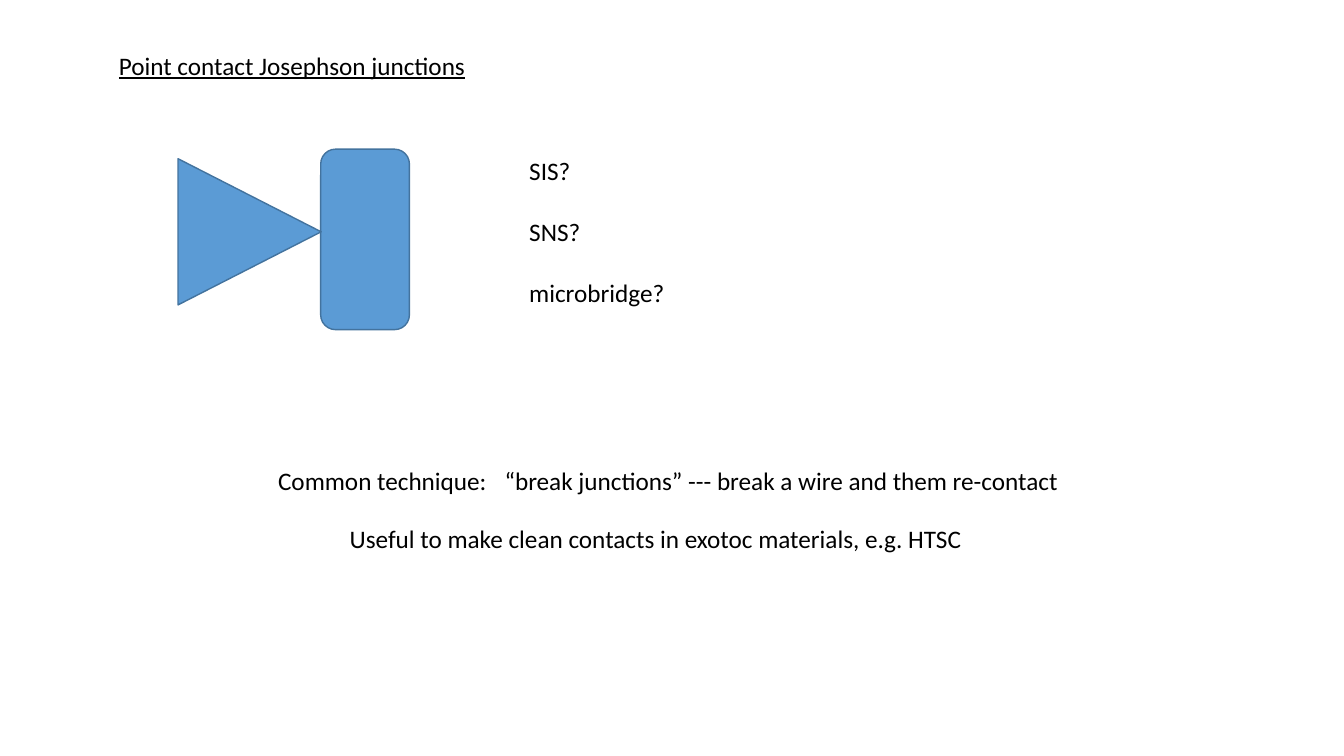
from lxml.etree import SubElement
from pptx import Presentation
from pptx.dml.color import RGBColor
from pptx.enum.shapes import MSO_SHAPE
from pptx.enum.text import MSO_AUTO_SIZE
from pptx.oxml.ns import qn
from pptx.util import Inches, Pt

BLUE = RGBColor(0x5B, 0x9B, 0xD5)
DARK_BLUE = RGBColor(0x43, 0x73, 0x9E)
BLACK = RGBColor(0x00, 0x00, 0x00)

deck = Presentation()
deck.slide_width, deck.slide_height = Inches(13.33), Inches(7.5)
slide = deck.slides.add_slide(deck.slide_layouts[6])

# The grid has 100 columns and 100 rows.
COLUMN = deck.slide_width / 100
ROW = deck.slide_height / 100
LINE_ROWS = 5.33


def on_grid(left, top, columns, rows):
    return (round(left * COLUMN), round(top * ROW),
            round(columns * COLUMN), round(rows * ROW))


BODY = {"name": "Calibri", "size": Pt(18)}
TITLE = {**BODY, "underline": True}

# Place, font format, lines of text
texts = [
    ((8.1, 6, 44.49, LINE_ROWS), TITLE, ["Point contact Josephson junctions"]),
    ((38.64, 19.87, 19.8, 21.6), BODY, ["SIS?", "SNS?", "microbridge?"]),
    ((19.95, 60.93, 60.62, LINE_ROWS), BODY,
     ["Common technique:\t“break junctions” --- break a wire and them re-contact"]),
    ((25.28, 68.53, 47.19, LINE_ROWS), BODY,
     ["Useful to make clean contacts in exotoc materials, e.g. HTSC"]),
]
for place, font_format, lines in texts:
    box = slide.shapes.add_textbox(*on_grid(*place))
    frame = box.text_frame
    frame.word_wrap = True
    frame.auto_size = MSO_AUTO_SIZE.SHAPE_TO_FIT_TEXT
    frame.text = "\n".join(lines)
    for number, para in enumerate(frame.paragraphs):
        if number:
            para.space_before = Pt(22)
        if "\t" in para.text:
            tabs = SubElement(para._p.get_or_add_pPr(), qn("a:tabLst"))
            SubElement(tabs, qn("a:tab"), pos=str(round(16.85 * COLUMN)), algn="l")
        for span in para.runs:
            span.font.color.rgb = BLACK
            for attribute, value in font_format.items():
                setattr(span.font, attribute, value)

# The tip, turned to the right, touches the flat contact.
contacts = [
    (MSO_SHAPE.ROUNDED_RECTANGLE, (23.86, 19.73, 6.6, 23.87), 0),
    (MSO_SHAPE.ISOSCELES_TRIANGLE, (13.13, 21.2, 10.88, 18.93), 90),
]
for kind, place, rotation in contacts:
    contact = slide.shapes.add_shape(kind, *on_grid(*place))
    contact.rotation = rotation
    contact.shadow.inherit = False
    contact.fill.solid()
    contact.fill.fore_color.rgb = BLUE
    contact.line.color.rgb = DARK_BLUE
    contact.line.width = Pt(1)

deck.save("out.pptx")
